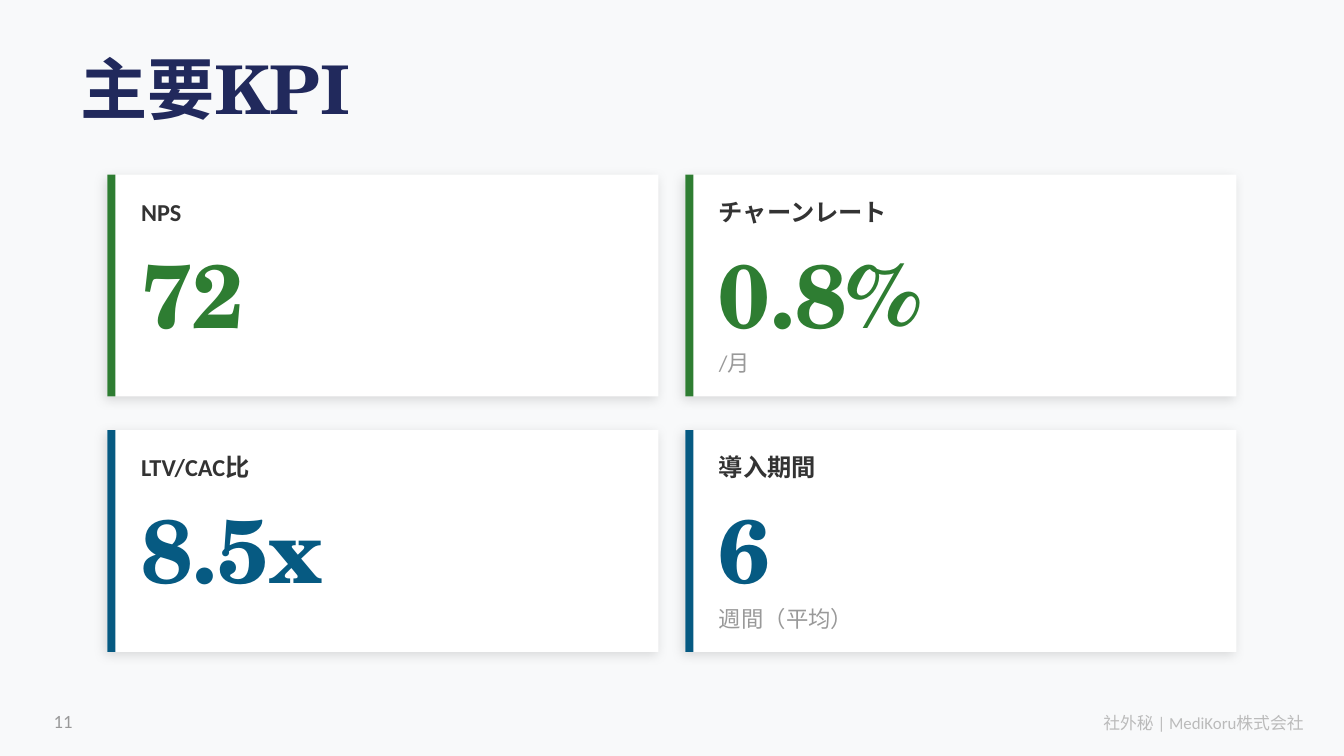
from dataclasses import dataclass
from typing import NamedTuple

from lxml import etree
from pptx import Presentation
from pptx import util as u
from pptx.dml.color import RGBColor
from pptx.enum import shapes, text
from pptx.oxml import ns


@dataclass(frozen=True)
class Theme:
    page: str = "F8F9FA"
    card: str = "FFFFFF"
    navy: str = "21295C"
    green: str = "2E7D32"
    blue: str = "065A82"
    ink: str = "333333"
    mute: str = "999999"
    pale: str = "BBBBBB"
    shade: str = "000000"
    serif: str = "TeX Gyre Schola"
    sans: str = "Calibri"
    head: int = 36
    value: int = 48
    label: int = 13
    unit: int = 12
    page_no: int = 10
    foot: int = 9


class Box(NamedTuple):
    col: float
    row: float
    cols: float
    rows: float

    def inner(self, col: float, row: float, cols: float, rows: float) -> "Box":
        return Box(self.col + col, self.row + row, cols, rows)


class Style(NamedTuple):
    size: int
    font: str
    color: str
    bold: bool = False


class Card(NamedTuple):
    label: str
    value: str
    unit: str
    color: str


T = Theme()
WIDTH = u.Inches(10)
HEIGHT = WIDTH * 9 // 16
CELL = WIDTH // 200
CARDS = [
    Card("NPS", "72", "", T.green),
    Card("チャーンレート", "0.8%", "/月", T.green),
    Card("LTV/CAC比", "8.5x", "", T.blue),
    Card("導入期間", "6", "週間（平均）", T.blue),
]


def place(box: Box) -> list[int]:
    return [round(n * CELL) for n in box]


def write(shape, words: str, style: Style, anchor=text.MSO_ANCHOR.MIDDLE,
          align=text.PP_ALIGN.LEFT) -> None:
    frame = shape.text_frame
    frame.word_wrap = True
    frame.auto_size = text.MSO_AUTO_SIZE.NONE
    frame.vertical_anchor = anchor
    frame.margin_left = frame.margin_right = 0
    frame.margin_top = frame.margin_bottom = 0
    para = frame.paragraphs[0]
    para.alignment = align
    run = para.add_run()
    run.text = words
    font = run.font
    font.size = u.Pt(style.size)
    font.name = style.font
    font.bold = style.bold
    font.color.rgb = RGBColor.from_string(style.color)


def label(slide, box: Box, words: str, style: Style, **opts) -> None:
    write(slide.shapes.add_textbox(*place(box)), words, style, **opts)


def block(slide, box: Box, color: str):
    shape = slide.shapes.add_shape(shapes.MSO_SHAPE.RECTANGLE, *place(box))
    shape.fill.solid()
    shape.fill.fore_color.rgb = RGBColor.from_string(color)
    shape.line.fill.background()
    shape.shadow.inherit = False
    return shape


def shade(shape) -> None:
    effects = shape._element.spPr.find(ns.qn("a:effectLst"))
    outer = etree.SubElement(
        effects, ns.qn("a:outerShdw"), blurRad=str(u.Pt(6)), dist=str(u.Pt(2)),
        dir=str(135 * 60000), algn="bl", rotWithShape="0")
    color = etree.SubElement(outer, ns.qn("a:srgbClr"), val=T.shade)
    etree.SubElement(color, ns.qn("a:alpha"), val="12000")


def draw(slide, box: Box, card: Card) -> None:
    shade(block(slide, box, T.card))
    block(slide, box._replace(cols=1.2), card.color)
    label(slide, box.inner(5, 2, 72, 7), card.label,
          Style(T.label, T.sans, T.ink, True))
    label(slide, box.inner(5, 9, 72, 17), card.value,
          Style(T.value, T.serif, card.color, True))
    if card.unit:
        label(slide, box.inner(5, 25, 72, 6), card.unit,
              Style(T.unit, T.sans, T.mute))


def main() -> None:
    deck = Presentation()
    deck.slide_width, deck.slide_height = WIDTH, HEIGHT
    slide = deck.slides.add_slide(deck.slide_layouts.get_by_name("Title Only"))
    fill = slide.background.fill
    fill.solid()
    fill.fore_color.rgb = RGBColor.from_string(T.page)

    title = slide.shapes.title
    title.left, title.top, title.width, title.height = place(Box(12, 6, 180, 14))
    write(title, "主要KPI", Style(T.head, T.serif, T.navy, True))

    for i, card in enumerate(CARDS):
        row, col = divmod(i, 2)
        draw(slide, Box(16 + 86 * col, 26 + 38 * row, 82, 33), card)

    low = text.MSO_ANCHOR.BOTTOM
    label(slide, Box(8, 103, 10, 6), "11",
          Style(T.page_no, T.sans, T.mute), anchor=low)
    label(slide, Box(140, 103, 54, 6), "社外秘 | MediKoru株式会社",
          Style(T.foot, T.sans, T.pale), anchor=low, align=text.PP_ALIGN.RIGHT)
    deck.save("out.pptx")


if __name__ == "__main__":
    main()
